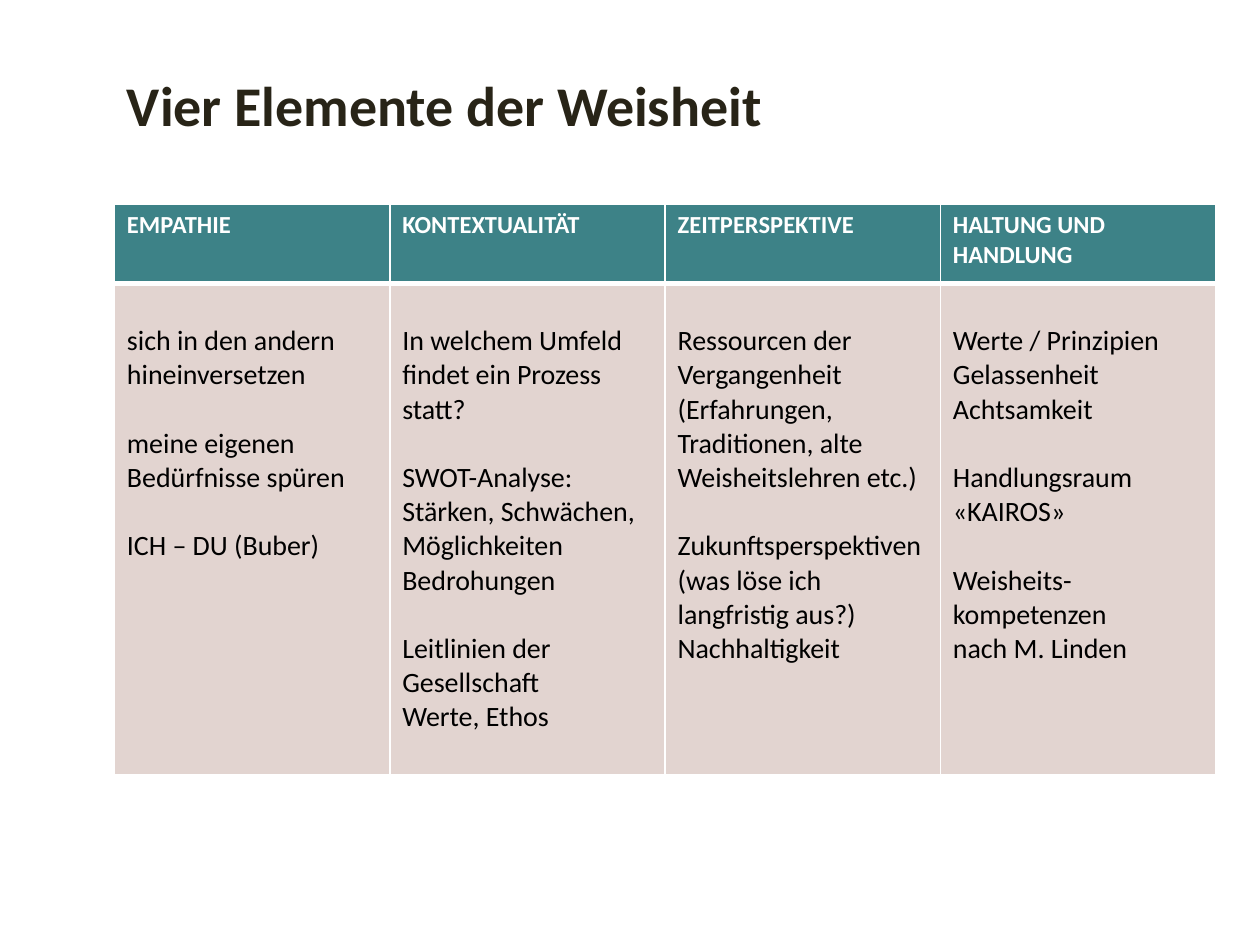
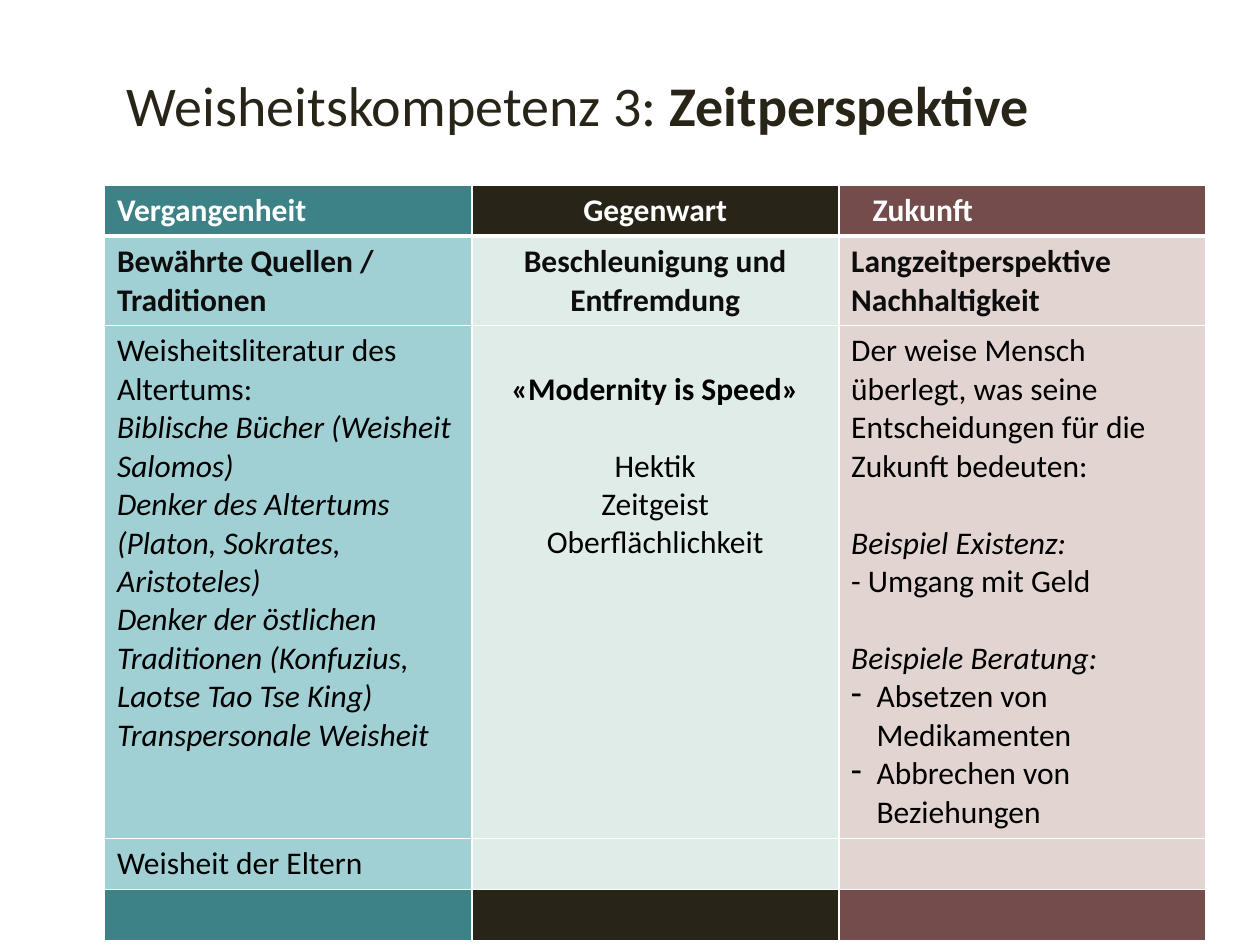
from dataclasses import dataclass, field

from lxml.etree import SubElement
from pptx import Presentation
from pptx.dml.color import RGBColor
from pptx.enum.text import MSO_ANCHOR, PP_ALIGN as ALIGN
from pptx.oxml import parse_xml
from pptx.oxml.ns import nsdecls, qn
from pptx.util import Cm, Pt

COLORS = {
    "white": "FFFFFF", "black": "000000", "ink": "0E0D0E", "dark": "282417",
    "teal": "3D8287", "brown": "744C4C",
    "light_teal": "A0D0D4", "mint": "E0ECE7", "rose": "E2D4D0",
}
FONT = "Calibri"
LINE = 1.22  # line height of the font, relative to its size


@dataclass
class Para:
    text: str
    gap: bool = False     # one line of space before
    bullet: bool = False
    fmt: dict = field(default_factory=dict)


@dataclass
class Cell:
    fill: str
    paras: list = field(default_factory=list)
    fmt: dict = field(default_factory=dict)
    align: ALIGN = ALIGN.LEFT
    top: float = 0.13     # margins in cm
    left: float = 0.25


class Deck:
    def __init__(self, width, height):
        self.prs = Presentation()
        self.prs.slide_width, self.prs.slide_height = Cm(width), Cm(height)
        self.s = None

    def slide(self):
        self.s = self.prs.slides.add_slide(self.prs.slide_layouts[6])

    def run(self, p, text, color, **fmt):
        r = p.add_run()
        r.text = text
        r.font.color.rgb = RGBColor.from_string(COLORS[color])
        for name, value in {"name": FONT, **fmt}.items():
            setattr(r.font, name, value)

    def title(self, *parts):
        sp = self.s.shapes.add_textbox(Cm(2.31), Cm(0.71), Cm(22.2), Cm(2.79))
        tf = sp.text_frame
        tf.word_wrap, tf.vertical_anchor = True, MSO_ANCHOR.MIDDLE
        for text, bold in parts:
            self.run(tf.paragraphs[0], text, "dark", size=Pt(32), bold=bold)

    def bullet(self, p, char="-", indent=0.51):
        ppr = p._p.get_or_add_pPr()
        ppr.set("marL", str(Cm(indent)))
        ppr.set("indent", str(-Cm(indent)))
        SubElement(ppr, qn("a:buChar")).set("char", char)

    def borders(self, tc, widths):
        tcpr = tc._tc.get_or_add_tcPr()
        for i, (side, width) in enumerate(widths.items()):
            tcpr.insert(i, parse_xml(
                f'<a:ln{side} {nsdecls("a")} w="{Pt(width)}"><a:solidFill>'
                f'<a:srgbClr val="{COLORS["white"]}"/></a:solidFill></a:ln{side}>'))

    def cell(self, tc, cell):
        tc.fill.solid()
        tc.fill.fore_color.rgb = RGBColor.from_string(COLORS[cell.fill])
        tc.margin_top, tc.margin_left = Cm(cell.top), Cm(cell.left)
        tf = tc.text_frame
        for i, item in enumerate(cell.paras):
            para = item if isinstance(item, Para) else Para(item)
            p = tf.add_paragraph() if i else tf.paragraphs[0]
            p.alignment = cell.align
            fmt = {**cell.fmt, **para.fmt}
            if para.gap:
                p.space_before = Pt(round(fmt["size"].pt * LINE, 1))
            if para.bullet:
                self.bullet(p)
            self.run(p, para.text, **fmt)

    def table(self, left, top, width, heights, rows):
        n = len(rows[0])
        frame = self.s.shapes.add_table(len(rows), n, Cm(left), Cm(top),
                                        Cm(width), Cm(sum(heights)))
        tbl = frame.table
        tbl.first_row = tbl.horz_banding = False
        for col in tbl.columns:
            col.width = Cm(width / n)
        for i, (height, row) in enumerate(zip(heights, rows)):
            tbl.rows[i].height = Cm(height)
            for j, cell in enumerate(row):
                self.cell(tbl.cell(i, j), cell)
                self.borders(tbl.cell(i, j), {"L": 1, "R": 1, "T": 3 if i == 1 else 1,
                                              "B": 3 if i == 0 else 1})


def elements_slide(deck):
    deck.slide()
    deck.title(("Vier Elemente der Weisheit", True))
    head = {"color": "white", "size": Pt(14), "bold": True}
    body = {"color": "black", "size": Pt(16)}
    elements = {
        "EMPATHIE": [
            "sich in den andern hineinversetzen",
            Para("meine eigenen Bedürfnisse spüren", gap=True),
            Para("ICH – DU (Buber)", gap=True)],
        "KONTEXTUALITÄT": [
            "In welchem Umfeld findet ein Prozess statt?",
            Para("SWOT-Analyse:", gap=True),
            "Stärken, Schwächen, Möglichkeiten",
            "Bedrohungen",
            Para("Leitlinien der Gesellschaft", gap=True),
            "Werte, Ethos"],
        "ZEITPERSPEKTIVE": [
            "Ressourcen der Vergangenheit",
            "(Erfahrungen, Traditionen, alte Weisheitslehren etc.)",
            Para("Zukunftsperspektiven (was löse ich langfristig aus?)", gap=True),
            "Nachhaltigkeit"],
        "HALTUNG UND HANDLUNG": [
            "Werte / Prinzipien", "Gelassenheit", "Achtsamkeit",
            Para("Handlungsraum", gap=True), "«KAIROS»",
            Para("Weisheits-", gap=True), "kompetenzen", "nach M. Linden"],
    }
    deck.table(2.31, 4.11, 22.2, [1.6, 9.9], [
        [Cell("teal", [name], head) for name in elements],
        [Cell("rose", paras, body, top=0.82) for paras in elements.values()],
    ])


def time_slide(deck):
    deck.slide()
    deck.title(("Weisheitskompetenz 3: ", False), ("Zeitperspektive", True))
    head = {"color": "white", "size": Pt(18), "bold": True}
    theme = {**head, "color": "ink"}
    body = {"color": "black", "size": Pt(18)}
    italic, bold = {"italic": True}, {"bold": True}
    strong = ["teal", "dark", "brown"]
    light = ["light_teal", "mint", "rose"]
    past = [
        "Weisheitsliteratur des Altertums:",
        Para("Biblische Bücher (Weisheit Salomos)", fmt=italic),
        Para("Denker des Altertums (Platon, Sokrates, Aristoteles)", fmt=italic),
        Para("Denker der östlichen Traditionen (Konfuzius, Laotse Tao Tse King)",
             fmt=italic),
        Para("Transpersonale Weisheit", fmt=italic)]
    present = [
        Para("«Modernity is Speed»", fmt=bold),
        Para("Hektik", gap=True), "Zeitgeist", "Oberflächlichkeit"]
    future = [
        "Der weise Mensch überlegt, was seine Entscheidungen für die Zukunft bedeuten:",
        Para("Beispiel Existenz:", gap=True, fmt=italic),
        "- Umgang mit Geld",
        Para("Beispiele Beratung:", gap=True, fmt=italic),
        Para("Absetzen von Medikamenten", bullet=True),
        Para("Abbrechen von Beziehungen", bullet=True)]
    center = ALIGN.CENTER
    deck.table(2.11, 3.73, 22.2, [1.03, 1.8, 10.34, 1.03, 1.03], [
        [Cell("teal", ["Vergangenheit"], head),
         Cell("dark", ["Gegenwart"], head, center),
         Cell("brown", ["Zukunft"], head, left=0.68)],
        [Cell("light_teal", ["Bewährte Quellen /", "Traditionen"], theme),
         Cell("mint", ["Beschleunigung und Entfremdung"], theme, center),
         Cell("rose", ["Langzeitperspektive", "Nachhaltigkeit"], theme)],
        [Cell("light_teal", past, body),
         Cell("mint", present, body, center, top=0.9),
         Cell("rose", future, body)],
        [Cell(fill, ["Weisheit der Eltern"] if i == 0 else [], body)
         for i, fill in enumerate(light)],
        [Cell(fill) for fill in strong],
    ])


def main():
    deck = Deck(25.4, 19.05)
    elements_slide(deck)
    time_slide(deck)
    deck.prs.save("out.pptx")


if __name__ == "__main__":
    main()
